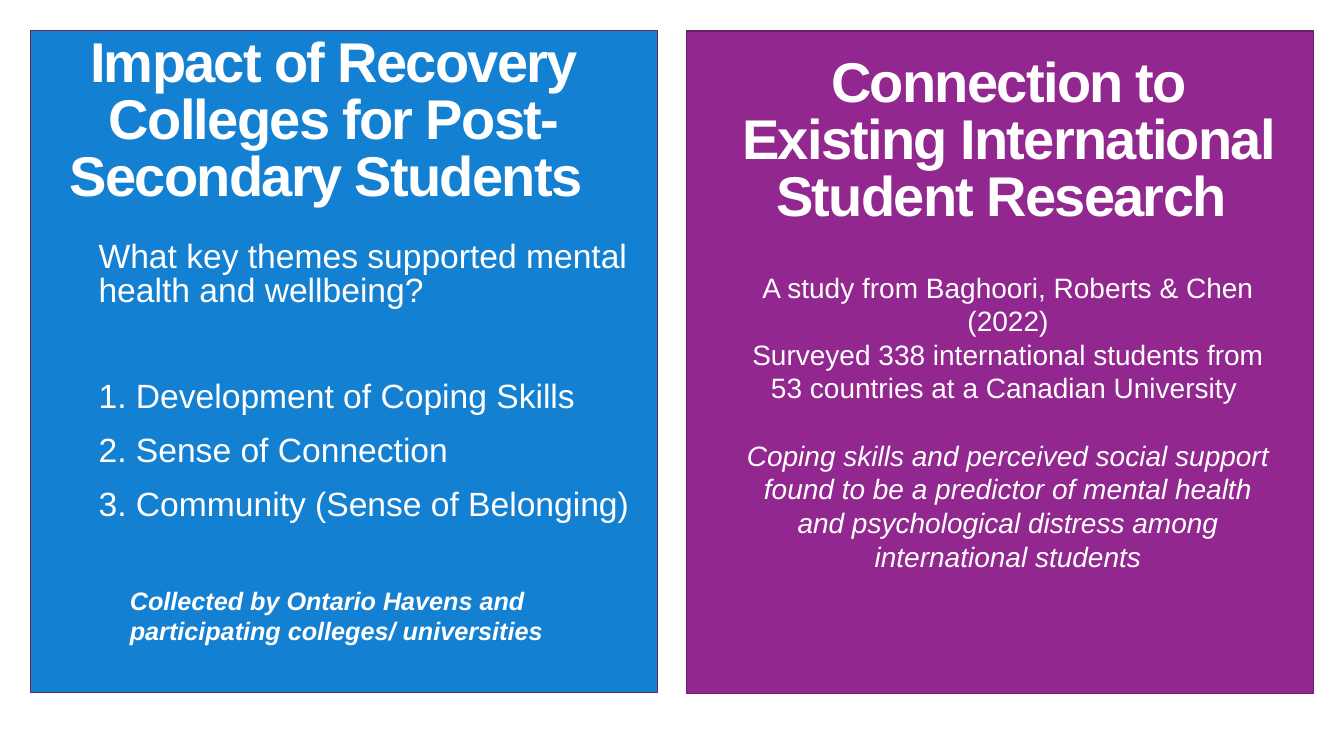
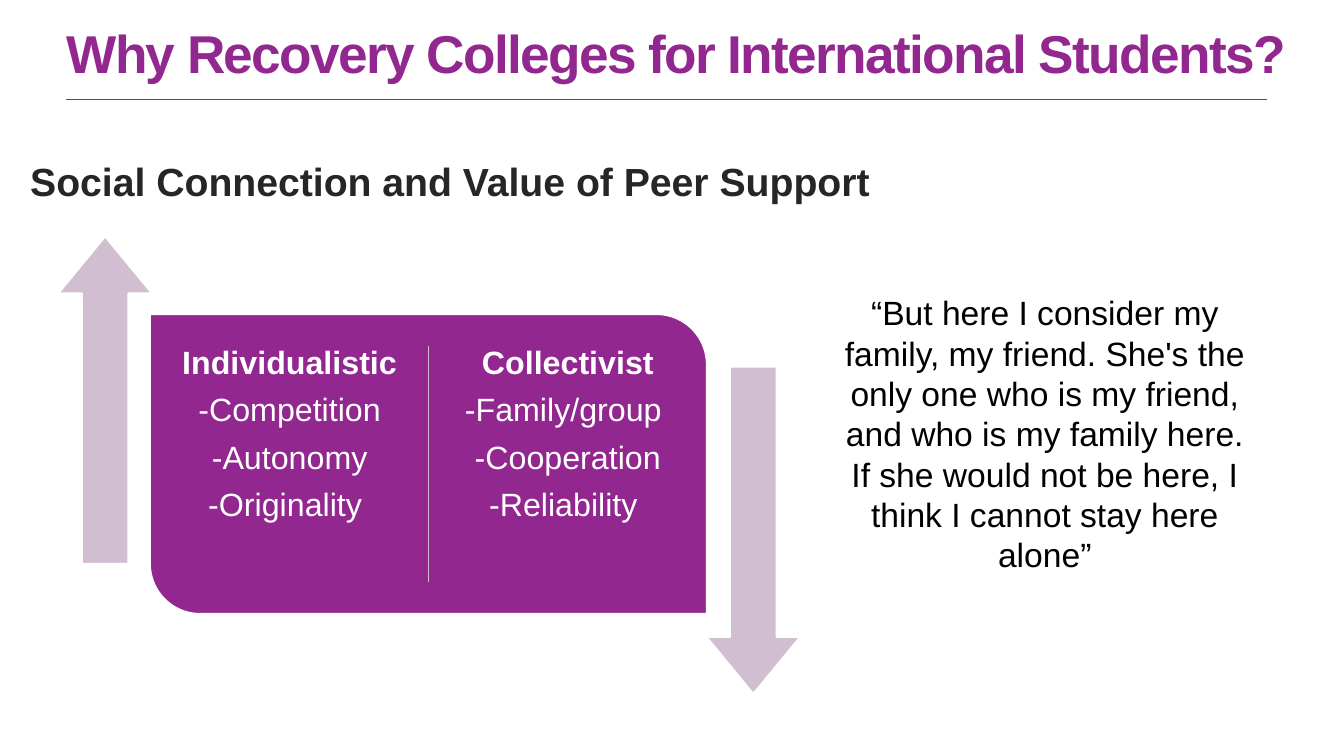
import pptx
import pptx.util
import pptx.dml.color
import pptx.enum.shapes
import pptx.enum.text
import pptx.oxml.ns
import lxml.etree

Pt = pptx.util.Pt
SHAPE = pptx.enum.shapes.MSO_SHAPE
ANCHOR = pptx.enum.text.MSO_ANCHOR
LEFT = pptx.enum.text.PP_ALIGN.LEFT
CENTER = pptx.enum.text.PP_ALIGN.CENTER

COLORS = {
    "blue": "1480D1",
    "purple": "92278F",
    "outline": "6C1D6A",
    "mauve": "D2BED1",
    "white": "FFFFFF",
    "dark": "262626",
    "black": "000000",
}
TITLE_STYLE = {"bold": True, "spacing": 0.85, "tracking": -120, "anchor": ANCHOR.MIDDLE}


def color(name):
    return pptx.dml.color.RGBColor.from_string(COLORS[name])


def write(shape, box, lines, size, tint, align=LEFT, bold=False, italic=False,
          spacing=1.0, tracking=0, anchor=ANCHOR.TOP):
    """Place a text shape and fill it with uniformly formatted paragraphs."""
    shape.left, shape.top, shape.width, shape.height = [Pt(value) for value in box]
    frame = shape.text_frame
    frame.word_wrap = True
    frame.auto_size = pptx.enum.text.MSO_AUTO_SIZE.NONE
    frame.vertical_anchor = anchor
    frame.text = "\n".join(lines)
    for paragraph in frame.paragraphs:
        paragraph.alignment = align
        paragraph.line_spacing = spacing
        paragraph.space_before = paragraph.space_after = Pt(0)
        for run in paragraph.runs:
            run.font.name = "Arial"
            run.font.size = Pt(size)
            run.font.bold = bold
            run.font.italic = italic
            run.font.color.rgb = color(tint)
            if tracking:
                run._r.get_or_add_rPr().set("spc", str(tracking))
    return frame.paragraphs


def set_bullet(paragraph, tag, margin, hanging=0, **attributes):
    """Set the bullet kind and indents of a body paragraph."""
    properties = paragraph._p.get_or_add_pPr()
    properties.set("marL", str(Pt(margin)))
    properties.set("indent", str(-Pt(hanging)))
    lxml.etree.SubElement(properties, pptx.oxml.ns.qn(tag), attributes)


presentation = pptx.Presentation()
presentation.slide_width = Pt(960)
presentation.slide_height = Pt(540)
layout = presentation.slide_layouts[1]

# Slide 1: two coloured panels, placed behind the placeholders
slide = presentation.slides.add_slide(layout)
shapes = slide.shapes
panels = [(21.6, 21.6, "blue"), (490.3, 22.3, "purple")]
for index, (left, top, fill) in enumerate(panels):
    panel = shapes.add_shape(SHAPE.RECTANGLE, Pt(left), Pt(top), Pt(448), Pt(473))
    panel.shadow.inherit = False
    panel.fill.solid()
    panel.fill.fore_color.rgb = color(fill)
    panel.line.color.rgb = color("outline")
    panel.line.width = Pt(1)
    shapes._spTree.insert(2 + index, panel._element)

# Panel headings
headings = [
    (shapes.add_textbox(0, 0, 0, 0), 36.7, 22.3,
     "Impact of Recovery Colleges for Post-Secondary Students "),
    (shapes.title, 519, 36.7,
     "Connection to Existing International Student Research "),
]
for shape, left, top, text in headings:
    write(shape, (left, top, 402.5, 130.3), [text], 40, "white", CENTER, **TITLE_STYLE)

# Themes
themes = write(slide.placeholders[1], (56, 168.5, 402.5, 240), [
    "What key themes supported mental health and wellbeing?",
    "Development of Coping Skills",
    "Sense of Connection",
    "Community (Sense of Belonging)",
], 24, "white", spacing=0.85)
set_bullet(themes[0], "a:buNone", 7.2)
for paragraph in themes[1:]:
    paragraph.space_before = Pt(14)
    set_bullet(paragraph, "a:buAutoNum", 33.9, 26.7, type="arabicPeriod")
themes[1].space_before = Pt(51)

write(shapes.add_textbox(0, 0, 0, 0), (85.7, 414.7, 321.8, 51), [
    "Collected by Ontario Havens and",
    "participating colleges/ universities",
], 18, "white", bold=True, italic=True)

# Study
study = write(shapes.add_textbox(0, 0, 0, 0), (522.7, 189.4, 394.6, 225), [
    "A study from Baghoori, Roberts & Chen (2022)",
    "Surveyed 338 international students from 53 countries at a Canadian University ",
    "Coping skills and perceived social support found to be a predictor of mental "
    "health and psychological distress among international students",
], 20, "white", CENTER)
study[2].space_before = Pt(24)
study[2].runs[0].font.italic = True

# Slide 2: title and subheading
slide = presentation.slides.add_slide(layout)
shapes = slide.shapes
write(shapes.title, (40.3, 10, 910, 61.4),
      ["Why Recovery Colleges for International Students?"], 38, "purple", **TITLE_STYLE)
subheading = write(slide.placeholders[1], (7.2, 113.8, 633.6, 50),
                   ["Social Connection and Value of Peer Support"],
                   28, "dark", bold=True, spacing=0.85)
set_bullet(subheading[0], "a:buNone", 7.2)

# Comparison card and arrows
blocks = [
    (SHAPE.ROUND_2_DIAG_RECTANGLE, (107.3, 224.6, 397.4, 213.8), (0, 0.167), "purple"),
    (SHAPE.UP_ARROW, (42, 169.2, 66.2, 233.3), (0.498, 0.607), "mauve"),
    (SHAPE.DOWN_ARROW, (505, 262.1, 66.2, 233.3), (0.498, 0.607), "mauve"),
]
for kind, box, adjustments, fill in blocks:
    block = shapes.add_shape(kind, *[Pt(value) for value in box])
    block.shadow.inherit = False
    for index, value in enumerate(adjustments):
        block.adjustments[index] = value
    block.fill.solid()
    block.fill.fore_color.rgb = color(fill)
    block.line.color.rgb = color("white")
    block.line.width = Pt(1)

# Title rule and card divider
rules = [
    ((47.5, 71.3, 905, 71.3), "purple", 0.75),
    ((306, 247, 306, 415.4), "mauve", 1),
]
for ends, tint, width in rules:
    rule = shapes.add_connector(pptx.enum.shapes.MSO_CONNECTOR.STRAIGHT,
                                *[Pt(value) for value in ends])
    rule.line.color.rgb = color(tint)
    rule.line.width = Pt(width)
    lxml.etree.SubElement(rule._element.spPr, pptx.oxml.ns.qn("a:effectLst"))

# Card columns
columns = [
    (121, ["Individualistic", "-Competition", "-Autonomy", "-Originality "]),
    (319.7, ["Collectivist", "-Family/group ", "-Cooperation", "-Reliability "]),
]
for left, lines in columns:
    column = shapes.add_textbox(0, 0, 0, 0)
    column.text_frame.margin_top = Pt(7.2)
    paragraphs = write(column, (left, 240.5, 172, 181.4), lines, 23, "white",
                       CENTER, spacing=0.9)
    for paragraph in paragraphs:
        paragraph.space_after = Pt(9)
    paragraphs[0].runs[0].font.bold = True

# Quote
write(shapes.add_textbox(0, 0, 0, 0), (587.5, 205.2, 317.5, 211), [
    "“But here I consider my family, my friend. She's the only one who is my friend, "
    "and who is my family here. If she would not be here, I think I cannot stay "
    "here alone”",
], 24, "black", CENTER)

presentation.save("out.pptx")
